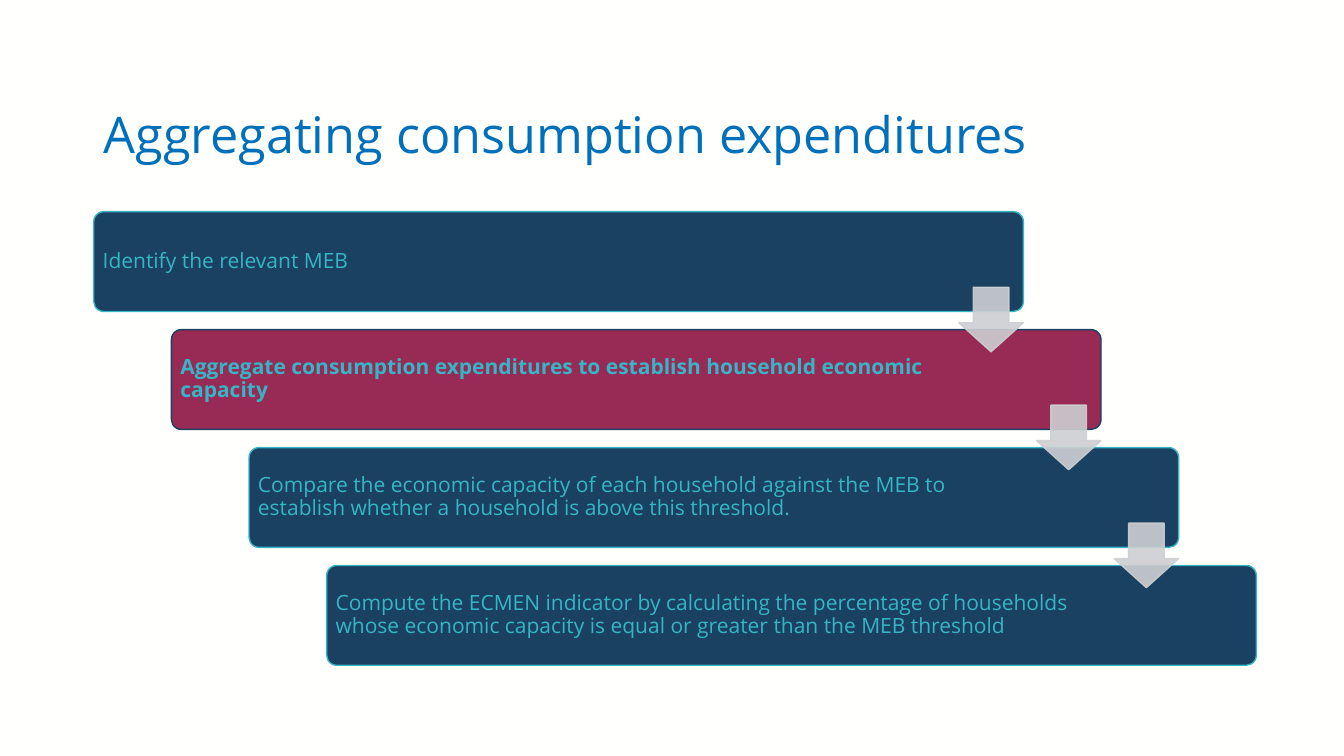
import pptx
import pptx.util
import pptx.dml.color
import pptx.enum.shapes
import pptx.enum.text
import pptx.oxml.ns
import lxml.etree

Inches = pptx.util.Inches
Pt = pptx.util.Pt
SHAPES = pptx.enum.shapes.MSO_SHAPE

TITLE = "Aggregating consumption expenditures"
STEPS = [
    ("Identify the relevant MEB", False),
    ("Aggregate consumption expenditures to establish household economic capacity", True),
    ("Compare the economic capacity of each household against the MEB to "
     "establish whether a household is above this threshold.", False),
    ("Compute the ECMEN indicator by calculating the percentage of households "
     "whose economic capacity is equal or greater than the MEB threshold", False),
]
COLORS = {
    "background": "FFFFFE",
    "title": "0070BA",
    "navy": "1A4161",
    "teal": "36B5C5",
    "current": "982B56",
    "arrow": "CDCFD2",
}
FONT = "Open Sans"
STEP_LEFT, STEP_TOP = 0.93, 2.1
STEP_WIDTH, STEP_HEIGHT = 9.22, 0.99
SHIFT_X, SHIFT_Y = 0.77, 1.17
ARROW_SIZE, ARROW_DROP = 0.64, 0.75
ARROW_OPACITY = 90


def color(name):
    return pptx.dml.color.RGBColor.from_string(COLORS[name])


def write_text(shape, text, size, color_name, bold=False):
    frame = shape.text_frame
    frame.word_wrap = True
    frame.vertical_anchor = pptx.enum.text.MSO_ANCHOR.MIDDLE
    paragraph = frame.paragraphs[0]
    paragraph.alignment = pptx.enum.text.PP_ALIGN.LEFT
    paragraph.line_spacing = 0.9
    run = paragraph.add_run()
    run.text = text
    run.font.name = FONT
    run.font.size = Pt(size)
    run.font.bold = bold
    run.font.color.rgb = color(color_name)


def add_shape(slide, kind, left, top, width, height, adjustments, fill, line):
    shape = slide.shapes.add_shape(
        kind, Inches(left), Inches(top), Inches(width), Inches(height))
    shape.shadow.inherit = False
    for index, value in enumerate(adjustments):
        shape.adjustments[index] = value
    shape.fill.solid()
    shape.fill.fore_color.rgb = color(fill)
    shape.line.color.rgb = color(line)
    shape.line.width = Pt(1)
    return shape


def add_step(slide, left, top, text, current):
    fill, line = ("current", "navy") if current else ("navy", "teal")
    step = add_shape(slide, SHAPES.ROUNDED_RECTANGLE, left, top,
                     STEP_WIDTH, STEP_HEIGHT, [0.1], fill, line)
    frame = step.text_frame
    frame.margin_left = frame.margin_top = frame.margin_bottom = Inches(0.06)
    frame.margin_right = Inches(1.47)
    write_text(step, text, 15, "teal", current)


def add_arrow(slide, left, top):
    arrow = add_shape(slide, SHAPES.DOWN_ARROW, left, top, ARROW_SIZE,
                      ARROW_SIZE, [0.55, 0.45], "arrow", "arrow")
    qn = pptx.oxml.ns.qn
    for element in arrow._element.spPr.iter(qn("a:srgbClr")):
        alpha = lxml.etree.SubElement(element, qn("a:alpha"))
        alpha.set("val", str(ARROW_OPACITY * 1000))


def main():
    presentation = pptx.Presentation()
    presentation.slide_width = Inches(13.33)
    presentation.slide_height = Inches(7.5)
    slide = presentation.slides.add_slide(presentation.slide_layouts[6])
    slide.background.fill.solid()
    slide.background.fill.fore_color.rgb = color("background")

    title = slide.shapes.add_textbox(
        Inches(0.93), Inches(0.73), Inches(11.53), Inches(1.26))
    write_text(title, TITLE, 36, "title")

    corners = [(STEP_LEFT + index * SHIFT_X, STEP_TOP + index * SHIFT_Y)
               for index in range(len(STEPS))]
    for (left, top), (text, current) in zip(corners, STEPS):
        add_step(slide, left, top, text, current)
    for left, top in corners[:-1]:
        add_arrow(slide, left + STEP_WIDTH - ARROW_SIZE, top + ARROW_DROP)

    presentation.save("out.pptx")


if __name__ == "__main__":
    main()
